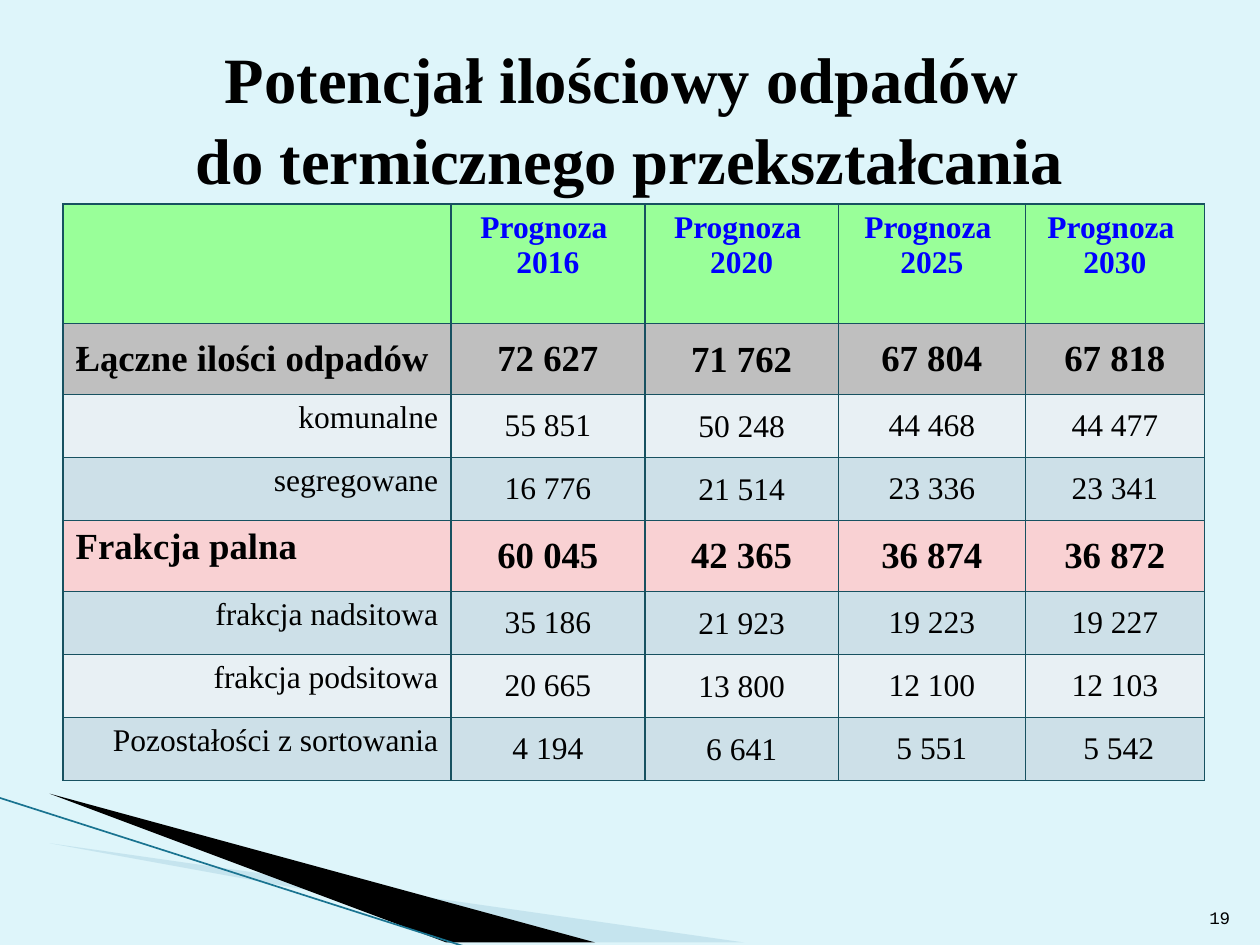
from lxml import etree
from pptx import Presentation
from pptx import util as u
from pptx.dml.color import RGBColor
from pptx.enum import shapes, text
from pptx.oxml import ns, parse_xml

Cm, Pt = u.Cm, u.Pt
LEFT, MID, RIGHT = text.PP_ALIGN.LEFT, text.PP_ALIGN.CENTER, text.PP_ALIGN.RIGHT
TOP, CENTER, BOTTOM = text.MSO_ANCHOR.TOP, text.MSO_ANCHOR.MIDDLE, text.MSO_ANCHOR.BOTTOM
hues = {
    "back": "DEF5FA", "wedge": "A0CBDC", "black": "000000", "line": "197390",
    "edge": "175160", "green": "99FF99", "blue": "0000FF", "gray": "BFBFBF",
    "pink": "F9D1D3", "pale": "E8F0F4", "mist": "CDE0E8",
}
rgb = {name: RGBColor.from_string(code) for name, code in hues.items()}


def write(frame, words, size=18, bold=False, hue="black", align=MID,
          anchor=CENTER, face="Times New Roman", space=None):
    frame.word_wrap = True
    frame.vertical_anchor = anchor
    par = frame.paragraphs[0]
    par.text = words
    par.alignment = align
    par.line_spacing = space
    for run in par.runs:
        run.font.name = face
        run.font.size = Pt(size)
        run.font.bold = bold
        run.font.color.rgb = rgb[hue]


def border(cell):
    props = cell._tc.get_or_add_tcPr()
    for at, side in enumerate(("lnL", "lnR", "lnT", "lnB")):
        props.insert(at, parse_xml(
            f'<a:{side} {ns.nsdecls("a")} w="12700"><a:solidFill>'
            f'<a:srgbClr val="{hues["edge"]}"/></a:solidFill></a:{side}>'))


deck = Presentation()
deck.slide_width, deck.slide_height = Cm(25.4), Cm(19.05)
slide = deck.slides.add_slide(deck.slide_layouts[6])
slide.background.fill.solid()
slide.background.fill.fore_color.rgb = rgb["back"]

wedges = [
    ("wedge", 40, [(1.4, 16.52), (15.11, 19.07), (11.58, 19.07)]),
    ("black", 100, [(1.35, 16.49), (11.61, 19.07), (9.45, 19.1)]),
]
for hue, alpha, spots in wedges:
    pen = slide.shapes.build_freeform(*spots[0], scale=Cm(1))
    pen.add_line_segments(spots[1:])
    wedge = pen.convert_to_shape()
    wedge.shadow.inherit = False
    wedge.line.fill.background()
    wedge.fill.solid()
    wedge.fill.fore_color.rgb = rgb[hue]
    if alpha < 100:
        tint = wedge._element.spPr.find(".//" + ns.qn("a:srgbClr"))
        etree.SubElement(tint, ns.qn("a:alpha")).set("val", str(alpha * 1000))

edge = slide.shapes.add_connector(
    shapes.MSO_CONNECTOR.STRAIGHT, Cm(-0.02), Cm(16.08), Cm(9.43), Cm(19.1))
edge.line.color.rgb = rgb["line"]
edge.line.width = Pt(0.95)
etree.SubElement(edge._element.spPr, ns.qn("a:effectLst"))

heads = ["", *(f"Prognoza \v{year}" for year in (2016, 2020, 2025, 2030))]
rows = [
    ("green", 2.41, heads),
    ("gray", 1.43, ["Łączne ilości odpadów", "72 627", "71 762", "67 804", "67 818"]),
    ("pale", 1.27, ["komunalne", "55 851", "50 248", "44 468", "44 477"]),
    ("mist", 1.27, ["segregowane", "16 776", "21 514", "23 336", "23 341"]),
    ("pink", 1.43, ["Frakcja palna", "60 045", "42 365", "36 874", "36 872"]),
    ("mist", 1.27, ["frakcja nadsitowa", "35 186", "21 923", "19 223", "19 227"]),
    ("pale", 1.27, ["frakcja podsitowa", "20 665", "13 800", "12 100", "12 103"]),
    ("mist", 1.27, ["Pozostałości z sortowania", "4 194", "6 641", "5 551", " 5 542"]),
]
wides = [7.82, 3.91, 3.9, 3.77, 3.61]
table = slide.shapes.add_table(
    len(rows), len(wides), Cm(1.27), Cm(4.11),
    Cm(sum(wides)), Cm(sum(row[1] for row in rows))).table
for col, wide in zip(table.columns, wides):
    col.width = Cm(wide)
for r, (hue, high, words) in enumerate(rows):
    table.rows[r].height = Cm(high)
    head, total = hue == "green", hue in ("gray", "pink")
    for c, word in enumerate(words):
        cell = table.cell(r, c)
        cell.fill.solid()
        cell.fill.fore_color.rgb = rgb[hue]
        border(cell)
        label = c == 0 and not head
        write(cell.text_frame, word, size=21 if total else 18, bold=head or total,
              hue="blue" if head else "black",
              align=(LEFT if total else RIGHT) if label else MID)
        high_up = head or (label and hue != "gray")
        cell.vertical_anchor = TOP if high_up else CENTER
        if c == 2 and not head:
            cell.margin_left = cell.margin_right = cell.margin_top = Cm(0.03)
            cell.margin_bottom = 0

title = slide.shapes.add_textbox(Cm(1.27), Cm(0.76), Cm(22.86), Cm(3.18))
write(title.text_frame, "Potencjał ilościowy odpadów \vdo termicznego przekształcania",
      size=36.9, bold=True, space=1.05)
page = slide.shapes.add_textbox(Cm(24.03), Cm(17.81), Cm(1.02), Cm(1.02))
write(page.text_frame, "19", size=10, align=RIGHT, anchor=BOTTOM, face="Courier New")

deck.save("out.pptx")
